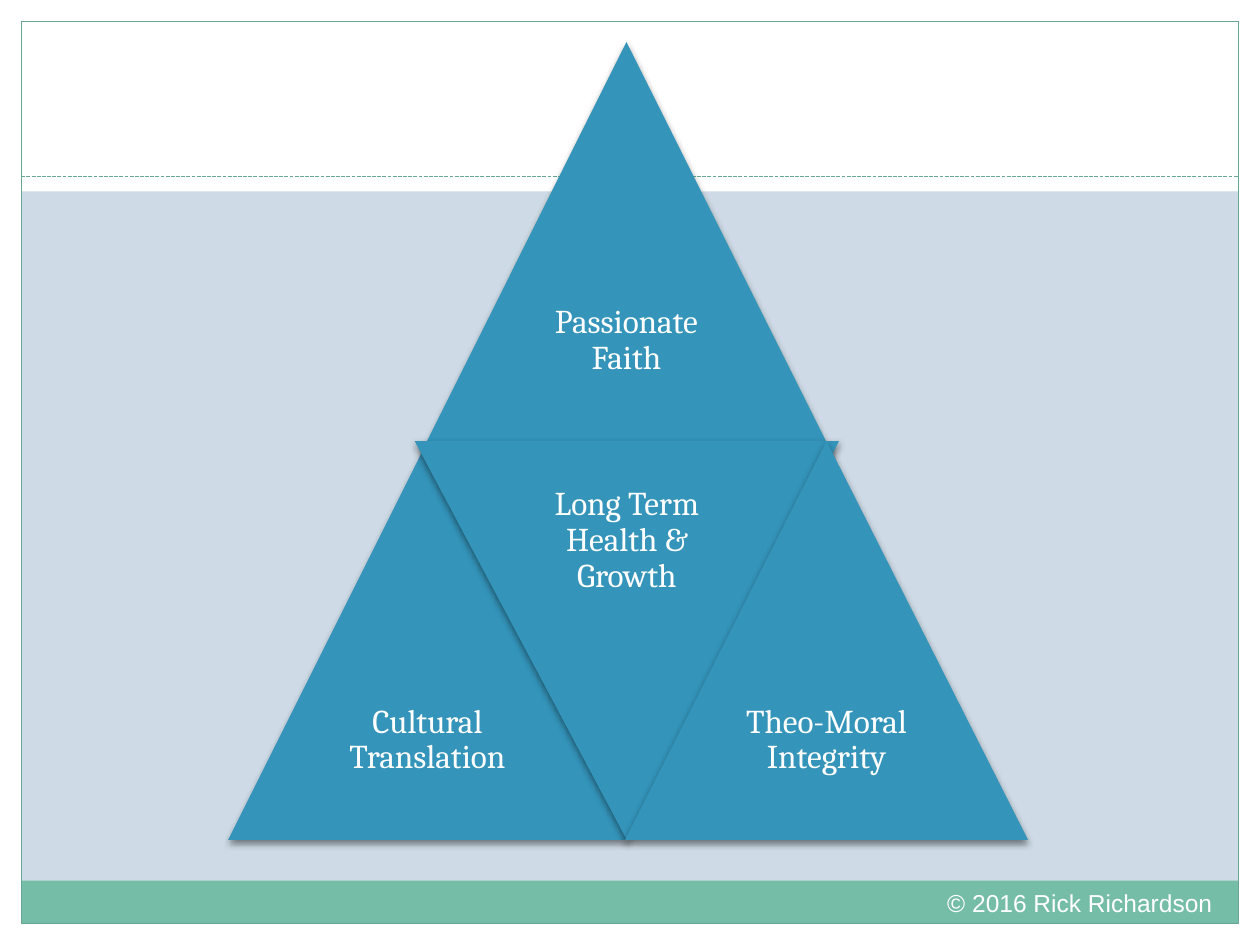
"""Builds a slide with a triangle of four labelled parts."""
from lxml import etree
from pptx import Presentation
from pptx import util as u
from pptx.dml.color import RGBColor
from pptx.enum import dml, shapes, text
from pptx.oxml import ns

COLORS = {
    "ground": "CEDBE6",
    "white": "FFFFFF",
    "footer": "75BDA7",
    "frame": "67A793",
    "triangle": "3494BA",
    "shadow": "000000",
}
WIDTH, HEIGHT, MARGIN = 720, 540, 12.2
TOP_BAND, RULE, FOOTER_TOP = 109.4, 100.8, 503.3
SIDE, APEX_TOP, BASE_TOP = 228, 24, 252
PARTS = [
    ("Passionate Faith", 244, APEX_TOP, SIDE, False),
    ("Cultural Translation", 130.3, BASE_TOP, SIDE, False),
    ("Long Term Health & Growth", 236.9, BASE_TOP, 242.6, True),
    ("Theo-Moral Integrity", 357.1, BASE_TOP, 230.4, False),
]


def rgb(name):
    """Return the named colour."""
    return RGBColor.from_string(COLORS[name])


def points(*lengths):
    """Return the lengths as points."""
    return [u.Pt(length) for length in lengths]


def add_figure(slide, kind, box, fill=None, line=None):
    """Add a preset shape with an optional fill and outline."""
    figure = slide.shapes.add_shape(kind, *points(*box))
    figure.shadow.inherit = False
    if fill:
        figure.fill.solid()
        figure.fill.fore_color.rgb = rgb(fill)
    else:
        figure.fill.background()
    if line:
        figure.line.color.rgb = rgb(line)
        figure.line.width = u.Pt(0.75)
    else:
        figure.line.fill.background()
    return figure


def add_shadow(figure):
    """Give a shape a soft shadow straight below it."""
    effects = figure._element.spPr.find(ns.qn("a:effectLst"))
    shadow = etree.SubElement(
        effects, ns.qn("a:outerShdw"), blurRad=str(u.Pt(4)),
        dist=str(u.Pt(2)), dir="5400000", rotWithShape="0")
    color = etree.SubElement(shadow, ns.qn("a:srgbClr"), val=COLORS["shadow"])
    etree.SubElement(color, ns.qn("a:alpha"), val="45000")


def add_label(slide, wording, box, font, size, insets):
    """Add a white text and return its frame."""
    frame = slide.shapes.add_textbox(*points(*box)).text_frame
    frame.word_wrap = True
    frame.text = wording
    frame.margin_left = frame.margin_right = u.Pt(insets[0])
    frame.margin_top = frame.margin_bottom = u.Pt(insets[1])
    run_font = frame.paragraphs[0].runs[0].font
    run_font.name, run_font.size = font, u.Pt(size)
    run_font.color.rgb = rgb("white")
    return frame


def add_rule(slide):
    """Add the dashed rule below the top area."""
    rule = slide.shapes.add_connector(
        shapes.MSO_CONNECTOR.STRAIGHT,
        *points(MARGIN, RULE, WIDTH - MARGIN, RULE))
    rule.line.color.rgb = rgb("frame")
    rule.line.width = u.Pt(0.75)
    rule.line.dash_style = dml.MSO_LINE.SQUARE_DOT
    etree.SubElement(rule._element.spPr, ns.qn("a:effectLst"))


def add_backdrop(slide):
    """Add the white margins, the footer band, the frame and the rule."""
    rectangle = shapes.MSO_SHAPE.RECTANGLE
    inner = WIDTH - 2 * MARGIN
    bottom = HEIGHT - MARGIN
    for box in [
        (0, bottom, WIDTH, MARGIN),
        (0, 0, WIDTH, TOP_BAND),
        (0, 0, MARGIN, HEIGHT),
        (WIDTH - MARGIN, 0, MARGIN, HEIGHT),
    ]:
        add_figure(slide, rectangle, box, "white")
    add_figure(slide, rectangle,
               (MARGIN, FOOTER_TOP, inner, bottom - FOOTER_TOP), "footer")
    add_figure(slide, rectangle,
               (MARGIN, MARGIN, inner, bottom - MARGIN), line="frame")
    add_rule(slide)


def add_part(slide, wording, left, top, width, inverted):
    """Add one triangle with its label in the wide half."""
    triangle = add_figure(slide, shapes.MSO_SHAPE.ISOSCELES_TRIANGLE,
                          (left, top, width, SIDE), "triangle")
    triangle.rotation = 180 if inverted else 0
    add_shadow(triangle)
    label_top = top if inverted else top + SIDE / 2
    frame = add_label(slide, wording,
                      (left + width / 4, label_top, width / 2, SIDE / 2),
                      "Cambria", 19, (5.7, 5.7))
    frame.vertical_anchor = text.MSO_ANCHOR.MIDDLE
    frame.paragraphs[0].alignment = text.PP_ALIGN.CENTER
    frame.paragraphs[0].line_spacing = 0.9


def main():
    """Build and save the slide."""
    deck = Presentation()
    deck.slide_width, deck.slide_height = points(WIDTH, HEIGHT)
    slide = deck.slides.add_slide(deck.slide_layouts[6])
    slide.background.fill.solid()
    slide.background.fill.fore_color.rgb = rgb("ground")
    add_backdrop(slide)
    for part in PARTS:
        add_part(slide, *part)
    add_label(slide, "© 2016 Rick Richardson", (534.2, 504, 171.4, 24),
              "Arial", 14, (7.2, 3.6))
    deck.save("out.pptx")


if __name__ == "__main__":
    main()
